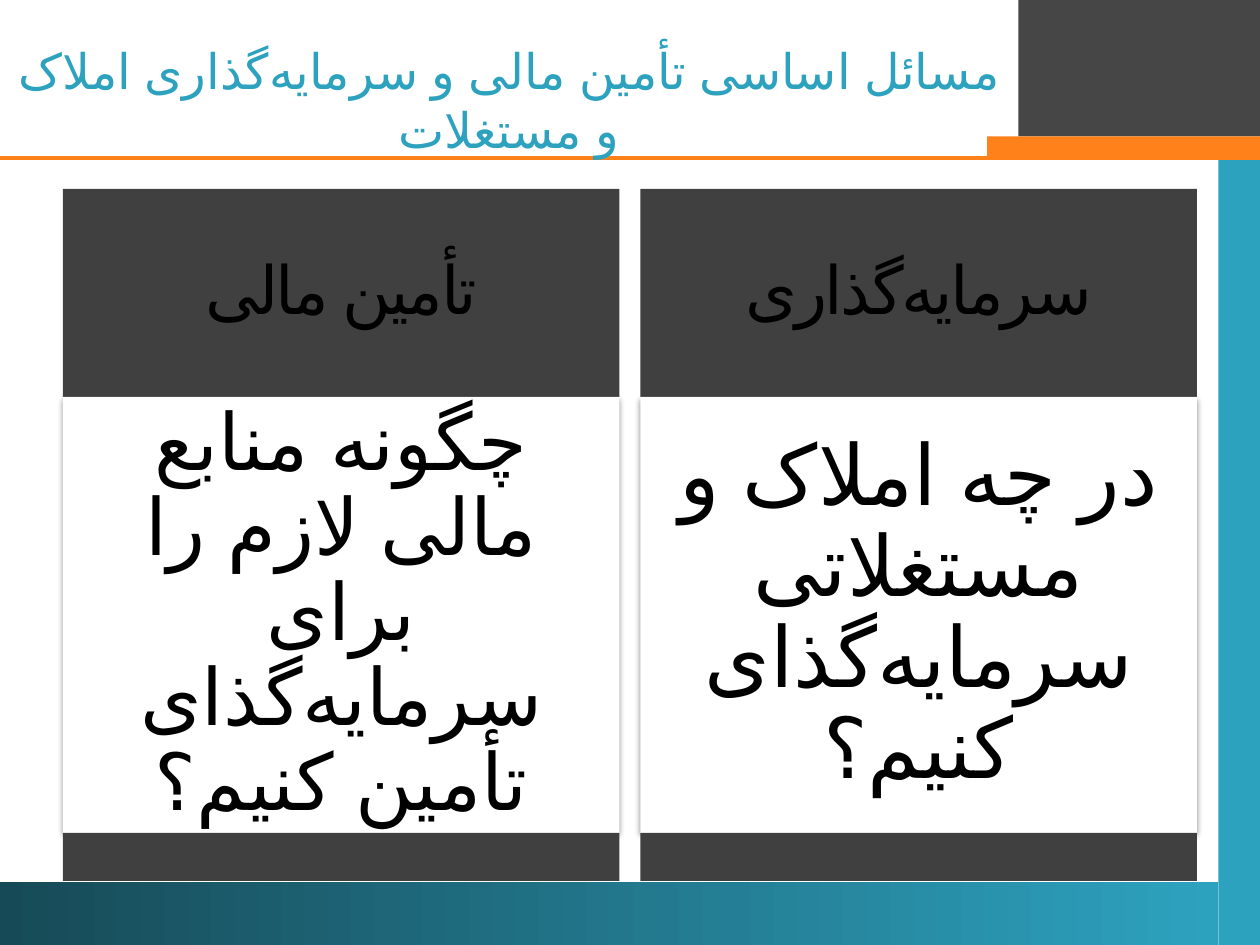
"""Build a slide on the two basic questions of real estate finance and investment."""
from lxml.etree import SubElement
from pptx import Presentation
from pptx.dml.color import RGBColor
from pptx.enum.shapes import MSO_CONNECTOR as Connector, MSO_SHAPE as Shape
from pptx.enum.text import MSO_ANCHOR as Anchor, PP_ALIGN as Align
from pptx.oxml import parse_xml
from pptx.oxml.ns import nsdecls, qn
from pptx.util import Cm, Pt

TEAL = RGBColor(0x2D, 0xA2, 0xBF)
DEEP_TEAL = RGBColor(0x17, 0x4A, 0x57)
ORANGE = RGBColor(0xFF, 0x81, 0x19)
CORNER_GRAY = RGBColor(0x46, 0x46, 0x46)
CARD_GRAY = RGBColor(0x40, 0x40, 0x40)
WHITE = RGBColor(0xFF, 0xFF, 0xFF)
BLACK = RGBColor(0, 0, 0)
FONT = "Arial"

WIDTH, HEIGHT = 25.4, 19.05
RULE_TOP = 3.18
NON_JOINER = chr(0x200C)
CAPITAL = "سرمایه" + NON_JOINER
TITLE = f"مسائل اساسی تأمین مالی و {CAPITAL}گذاری املاک و مستغلات"
CARDS = [
    {"heading": "تأمین مالی", "size": 45, "inset": 0.48,
     "question": f"چگونه منابع مالی لازم را برای {CAPITAL}گذای تأمین کنیم؟"},
    {"heading": f"{CAPITAL}گذاری", "size": 48, "inset": 0.51,
     "question": f"در چه املاک و مستغلاتی {CAPITAL}گذای کنیم؟"},
]
CARD_LEFT, CARD_TOP, CARD_WIDTH, CARD_GAP = 1.27, 3.81, 11.22, 0.42
HEADING_HEIGHT, QUESTION_HEIGHT, FOOT_HEIGHT = 4.19, 8.79, 0.97
SHADOW = (
    f'<a:effectLst {nsdecls("a")}><a:outerShdw blurRad="{Pt(3.1)}" dist="{Pt(1.6)}" '
    'dir="5400000" rotWithShape="0"><a:srgbClr val="000000"><a:alpha val="38000"/>'
    "</a:srgbClr></a:outerShdw></a:effectLst>"
)


def add_block(page, left, top, width, height, color):
    block = page.shapes.add_shape(
        Shape.RECTANGLE, Cm(left), Cm(top), Cm(width), Cm(height))
    block.shadow.inherit = False
    block.fill.solid()
    block.fill.fore_color.rgb = color
    block.line.fill.background()
    return block


def write(box, text, size, color, inset=0.25, line_spacing=1.0, tracking=0):
    frame = box.text_frame
    frame.word_wrap = True
    frame.vertical_anchor = Anchor.MIDDLE
    frame.margin_left = frame.margin_right = Cm(inset)
    frame.margin_top = frame.margin_bottom = Cm(inset)
    para = frame.paragraphs[0]
    para.alignment = Align.CENTER
    para.line_spacing = line_spacing
    para._p.get_or_add_pPr().set("rtl", "1")
    span = para.add_run()
    span.text = text
    span.font.size = Pt(size)
    span.font.name = FONT
    span.font.color.rgb = color
    properties = span._r.get_or_add_rPr()
    properties.set("lang", "fa-IR")
    SubElement(properties, qn("a:cs")).set("typeface", FONT)
    if tracking:
        properties.set("spc", str(tracking))


def add_frame(page):
    add_block(page, WIDTH - 0.84, RULE_TOP, 0.84, HEIGHT - RULE_TOP, TEAL)
    footer = add_block(page, 0, 17.78, WIDTH - 0.84, 1.27, TEAL)
    footer.fill.gradient()
    footer.fill.gradient_angle = 0
    for stop, color in zip(footer.fill.gradient_stops, (DEEP_TEAL, TEAL)):
        stop.color.rgb = color
    add_block(page, 20.53, 0, WIDTH - 20.53, 2.75, CORNER_GRAY)
    rule = page.shapes.add_connector(
        Connector.STRAIGHT, Cm(WIDTH), Cm(RULE_TOP), Cm(0), Cm(RULE_TOP))
    rule.line.color.rgb = ORANGE
    rule.line.width = Pt(2.25)
    SubElement(rule._element.spPr, qn("a:effectLst"))
    add_block(page, 19.9, 2.75, WIDTH - 19.9, 0.43, ORANGE)


def add_card(page, left, card):
    question_top = CARD_TOP + HEADING_HEIGHT
    foot_top = question_top + QUESTION_HEIGHT
    heading = add_block(page, left, CARD_TOP, CARD_WIDTH, HEADING_HEIGHT, CARD_GRAY)
    write(heading, card["heading"], 38, BLACK, 0.41, 0.9, -150)
    question = add_block(page, left, question_top, CARD_WIDTH, QUESTION_HEIGHT, WHITE)
    properties = question._element.spPr
    properties.replace(properties.find(qn("a:effectLst")), parse_xml(SHADOW))
    write(question, card["question"], card["size"], BLACK, card["inset"], 0.9)
    add_block(page, left, foot_top, CARD_WIDTH, FOOT_HEIGHT, CARD_GRAY)


def main():
    deck = Presentation()
    deck.slide_width, deck.slide_height = Cm(WIDTH), Cm(HEIGHT)
    page = deck.slides.add_slide(deck.slide_layouts[6])
    add_frame(page)
    title = page.shapes.add_textbox(Cm(0), Cm(1.27), Cm(20.53), Cm(1.48))
    write(title, TITLE, 28, TEAL)
    for index, card in enumerate(CARDS):
        add_card(page, CARD_LEFT + index * (CARD_WIDTH + CARD_GAP), card)
    deck.save("out.pptx")


if __name__ == "__main__":
    main()
